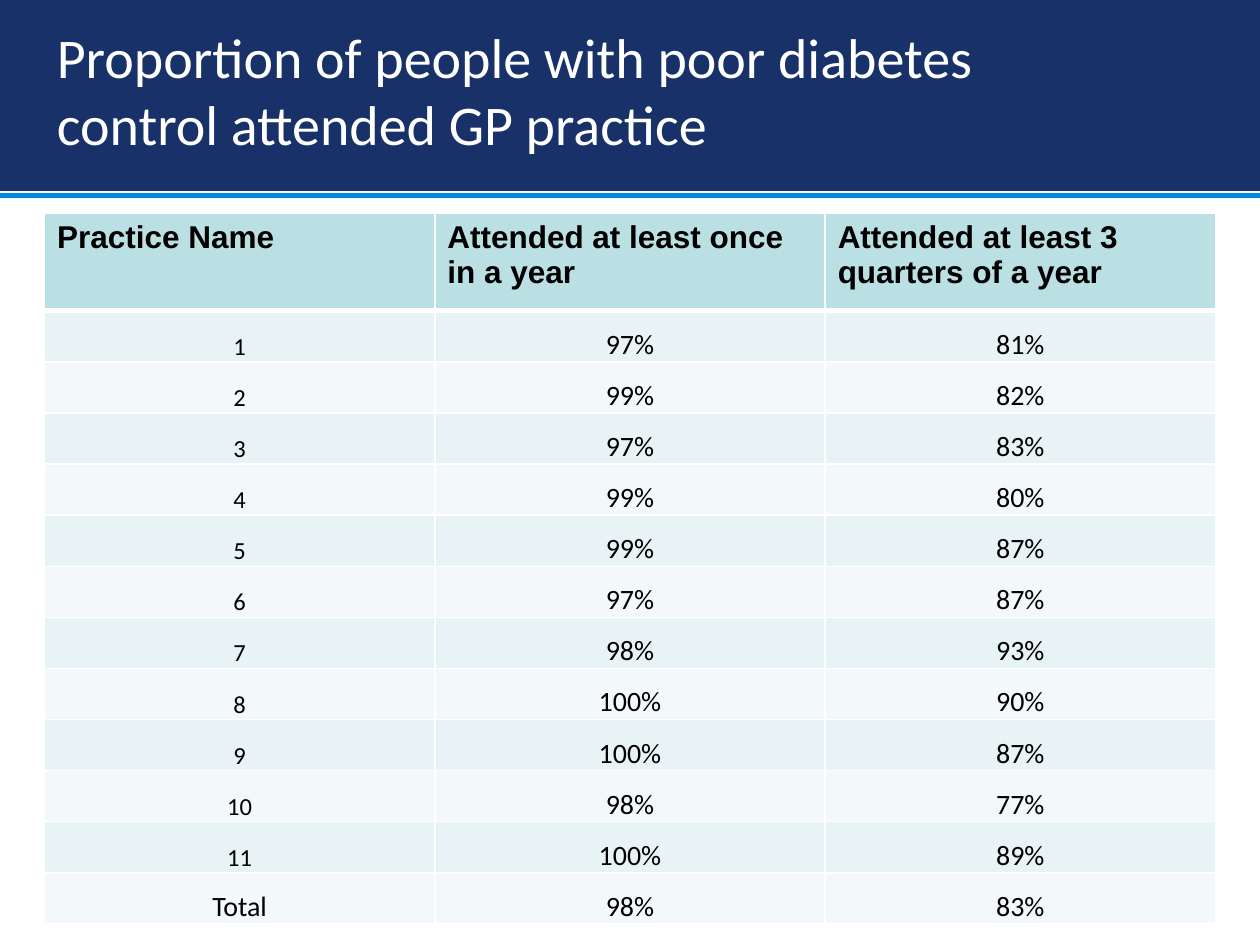
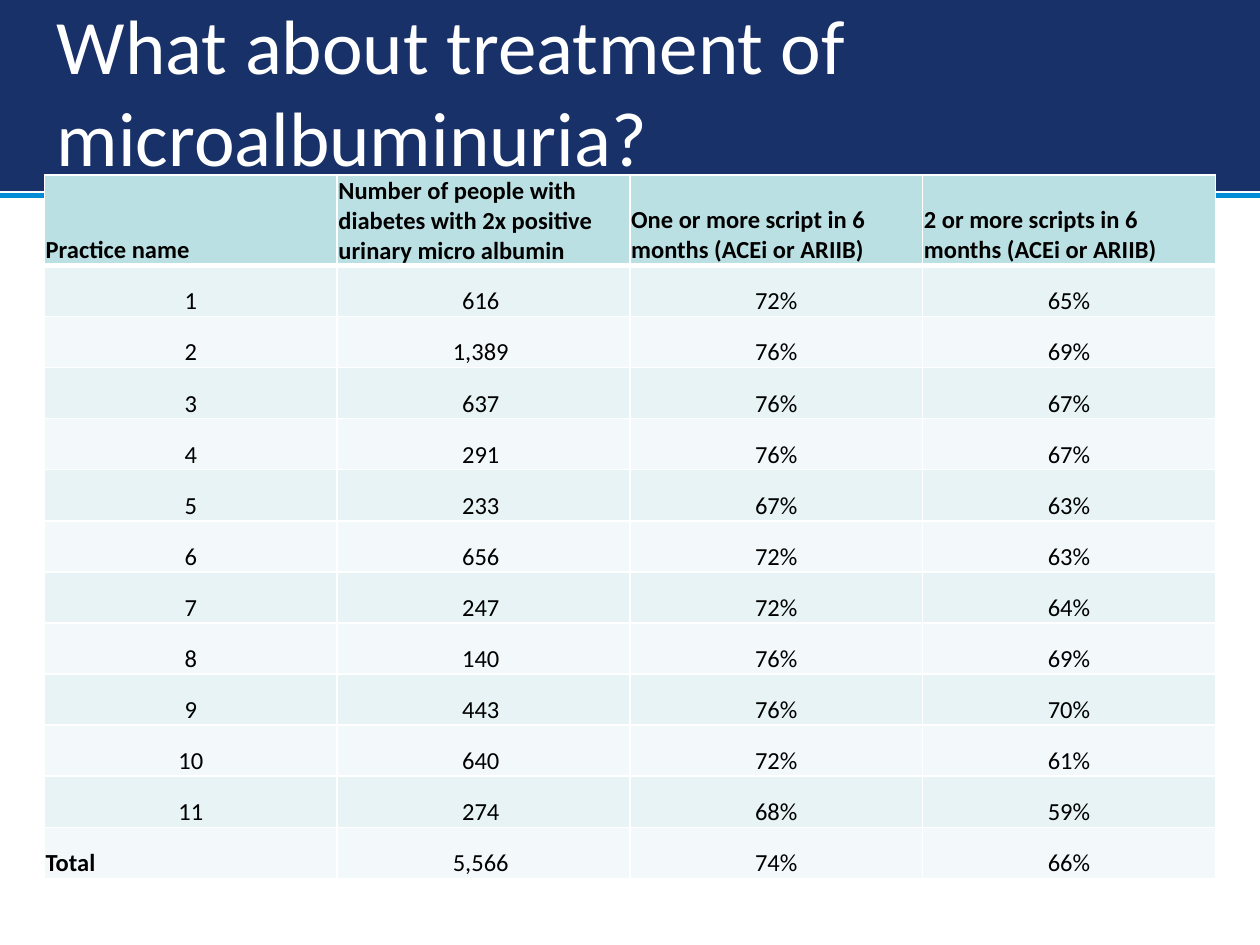
from lxml import etree
from pptx import Presentation
from pptx.dml.color import RGBColor
from pptx.enum.shapes import MSO_CONNECTOR, MSO_SHAPE
from pptx.enum.text import MSO_ANCHOR, PP_ALIGN
from pptx.oxml.ns import qn
from pptx.util import Pt

LEFT, CENTER = PP_ALIGN.LEFT, PP_ALIGN.CENTER
TOP, MIDDLE, BOTTOM = MSO_ANCHOR.TOP, MSO_ANCHOR.MIDDLE, MSO_ANCHOR.BOTTOM
RECTANGLE, STRAIGHT = MSO_SHAPE.RECTANGLE, MSO_CONNECTOR.STRAIGHT

COLORS = {
    "navy": "183169", "blue": "008CD6", "white": "FFFFFF", "black": "000000",
    "header": "BBE0E3", "odd": "E7F3F4", "even": "F3F9FA",
}
PAGE_WIDTH, PAGE_HEIGHT = 720, 540
MARGIN = 25.4
TABLE_WIDTH = PAGE_WIDTH - 2 * MARGIN
ROW_HEIGHT = 29.2
BODY_FONT = "Calibri"
TIGHT_INSETS = (0.72, 0.72, 0.72, 0)
ROOMY_INSETS = (7.2, 3.6, 7.2, 3.6)

ATTENDANCE_HEADERS = ["Practice Name", "Attended at least once in a year",
                      "Attended at least 3 quarters of a year"]
ATTENDANCE = [(97, 81), (99, 82), (97, 83), (99, 80), (99, 87), (97, 87),
              (98, 93), (100, 90), (100, 87), (98, 77), (100, 89), (98, 83)]

TREATMENT_HEADERS = [
    "Practice name",
    "Number of people with diabetes with 2x positive urinary micro albumin",
    "One or more script in 6 months (ACEi or ARIIB)",
    "2 or more scripts in 6 months (ACEi or ARIIB)"]
TREATMENT = [(616, 72, 65), (1389, 76, 69), (637, 76, 67), (291, 76, 67),
             (233, 67, 63), (656, 72, 63), (247, 72, 64), (140, 76, 69),
             (443, 76, 70), (640, 72, 61), (274, 68, 59), (5566, 74, 66)]


def color(name):
    return RGBColor.from_string(COLORS[name])


def practice_names(count):
    return [str(number) for number in range(1, count)] + ["Total"]


class PracticeDeck:
    def __init__(self):
        self.deck = Presentation()
        self.deck.slide_width = Pt(PAGE_WIDTH)
        self.deck.slide_height = Pt(PAGE_HEIGHT)
        self.page = None

    def start_page(self, title, title_size):
        self.page = self.deck.slides.add_slide(self.deck.slide_layouts[6])
        self.add_rule(111.6)
        self.add_band(107.4)
        self.add_title(title, title_size)

    def add_rule(self, top):
        rule = self.page.shapes.add_connector(
            STRAIGHT, Pt(0), Pt(top), Pt(PAGE_WIDTH), Pt(top))
        rule.line.color.rgb = color("blue")
        rule.line.width = Pt(3)
        etree.SubElement(rule._element.spPr, qn("a:effectLst"))

    def add_band(self, height):
        band = self.page.shapes.add_shape(
            RECTANGLE, Pt(0), Pt(0), Pt(PAGE_WIDTH), Pt(height))
        band.shadow.inherit = False
        band.fill.solid()
        band.fill.fore_color.rgb = color("navy")
        band.line.color.rgb = color("navy")
        band.line.width = Pt(3)

    def add_title(self, text, size):
        box = self.page.shapes.add_textbox(
            Pt(MARGIN), Pt(20), Pt(538.6), Pt(62.6))
        frame = box.text_frame
        frame.word_wrap = True
        frame.vertical_anchor = MIDDLE
        frame.text = text
        self.format_text(frame, size, "white")

    def format_text(self, frame, size, color_name, font=BODY_FONT,
                    bold=False, align=LEFT):
        for para in frame.paragraphs:
            para.alignment = align
            for span in para.runs:
                span.font.name = font
                span.font.size = Pt(size)
                span.font.bold = bold
                span.font.color.rgb = color(color_name)

    def add_table(self, top, header_height, rows):
        """Add an empty table for these rows of text and return it."""
        columns = len(rows[0])
        height = header_height + ROW_HEIGHT * (len(rows) - 1)
        table = self.page.shapes.add_table(
            len(rows), columns, Pt(MARGIN), Pt(top),
            Pt(TABLE_WIDTH), Pt(height)).table
        table.first_row = table.horz_banding = False
        for column in table.columns:
            column.width = Pt(TABLE_WIDTH / columns)
        for index, row in enumerate(table.rows):
            row.height = Pt(ROW_HEIGHT if index else header_height)
            fill = "header" if index == 0 else ("even", "odd")[index % 2]
            for cell, text in zip(row.cells, rows[index]):
                cell.text = text
                self.add_borders(cell, top=3 if index == 1 else 1,
                                 bottom=1 if index else 3)
                cell.fill.solid()
                cell.fill.fore_color.rgb = color(fill)
        return table

    def add_borders(self, cell, top, bottom):
        properties = cell._tc.get_or_add_tcPr()
        for side, width in (("L", 1), ("R", 1), ("T", top), ("B", bottom)):
            line = etree.SubElement(properties, qn(f"a:ln{side}"),
                                    w=str(int(Pt(width))))
            fill = etree.SubElement(line, qn("a:solidFill"))
            etree.SubElement(fill, qn("a:srgbClr"), val=COLORS["white"])

    def format_cell(self, cell, size, insets=TIGHT_INSETS, anchor=BOTTOM,
                    **text_style):
        (cell.margin_left, cell.margin_top,
         cell.margin_right, cell.margin_bottom) = map(Pt, insets)
        cell.vertical_anchor = anchor
        self.format_text(cell.text_frame, size, "black", **text_style)


def add_attendance_page(deck):
    deck.start_page("Proportion of people with poor diabetes control "
                    "attended GP practice", 32)
    rows = [ATTENDANCE_HEADERS]
    for name, shares in zip(practice_names(len(ATTENDANCE)), ATTENDANCE):
        rows.append([name] + [f"{share}%" for share in shares])
    table = deck.add_table(121.8, 55.8, rows)
    header, *body = table.rows
    for cell in header.cells:
        deck.format_cell(cell, 18, ROOMY_INSETS, TOP, font="Arial", bold=True)
    for row in body:
        for column, cell in enumerate(row.cells):
            is_number = column == 0 and cell.text != "Total"
            deck.format_cell(cell, 14 if is_number else 16, align=CENTER)


def add_treatment_page(deck):
    deck.start_page("What about treatment of microalbuminuria?", 44)
    rows = [TREATMENT_HEADERS]
    for name, (people, *shares) in zip(practice_names(len(TREATMENT)),
                                       TREATMENT):
        rows.append([name, f"{people:,} "] + [f"{share}%" for share in shares])
    table = deck.add_table(100, 51.6, rows)
    for index, row in enumerate(table.rows):
        for cell in row.cells:
            is_label = index == 0 or cell.text == "Total"
            deck.format_cell(cell, 14, bold=is_label,
                             align=LEFT if is_label else CENTER)


def main():
    deck = PracticeDeck()
    add_attendance_page(deck)
    add_treatment_page(deck)
    deck.deck.save("out.pptx")


if __name__ == "__main__":
    main()
